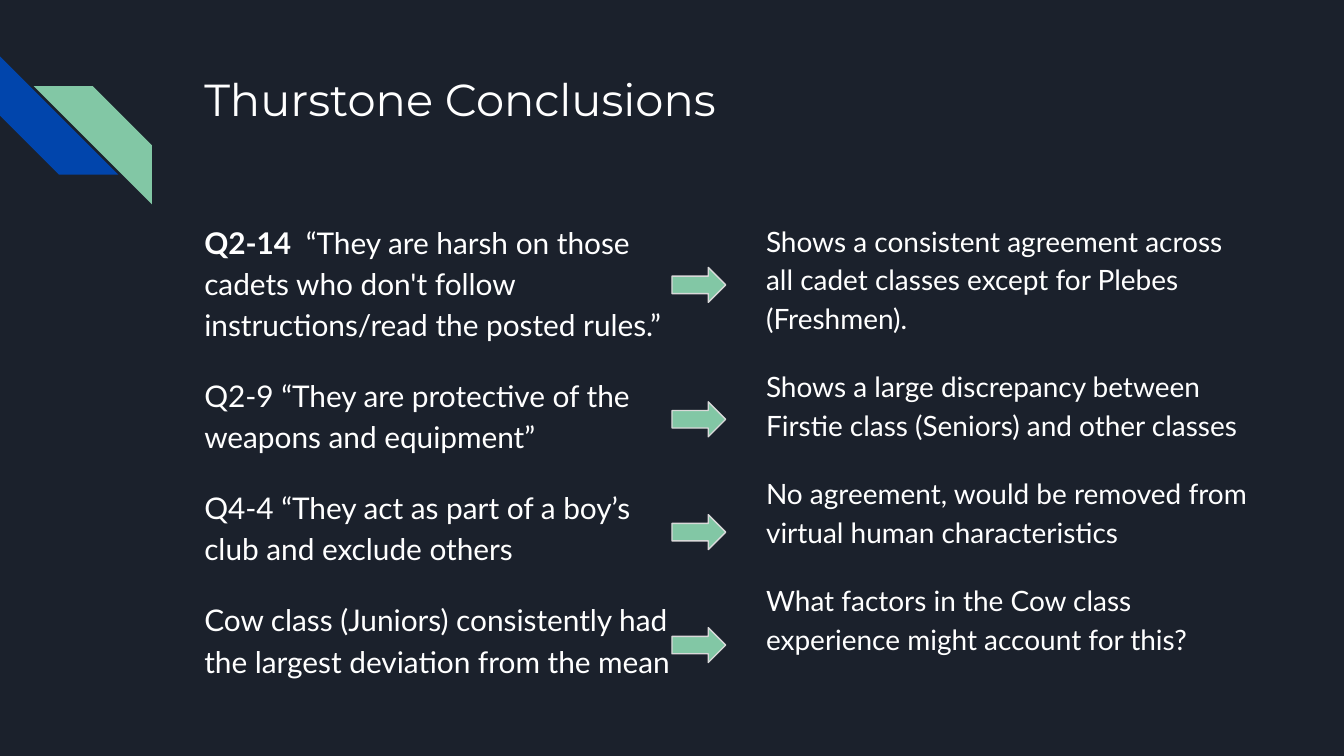
"""Build the Thurstone Conclusions slide: survey statements with arrows to their findings."""
import dataclasses

import pptx
import pptx.dml.color
import pptx.enum.shapes
import pptx.enum.text
import pptx.oxml
import pptx.oxml.ns
import pptx.util
from pptx.util import Inches

COLORS = {"background": "1B212C", "blue": "0145AC", "green": "82C7A5", "outline": "D9D9D9", "text": "FFFFFF"}
MSO_SHAPE = pptx.enum.shapes.MSO_SHAPE


@dataclasses.dataclass
class Conclusion:
    statement: str
    finding: str
    arrow_top: float
    label: str = ""


@dataclasses.dataclass
class Stripe:
    left: float
    top: float
    rotation: float
    color: str


CONCLUSIONS = [
    Conclusion("“They are harsh on those cadets who don't follow instructions/read the posted rules.”",
               "Shows a consistent agreement across all cadet classes except for Plebes (Freshmen).",
               1.99, label="Q2-14  "),
    Conclusion("Q2-9 “They are protective of the weapons and equipment”",
               "Shows a large discrepancy between Firstie class (Seniors) and other classes", 2.99),
    Conclusion("Q4-4 “They act as part of a boy’s club and exclude others",
               "No agreement, would be removed from virtual human characteristics", 3.83),
    Conclusion("Cow class (Juniors) consistently had the largest deviation from the mean",
               "What factors in the Cow class experience might account for this?", 4.67),
]
STRIPES = [Stripe(0, 0.42, 270, "blue"), Stripe(0.25, 0.64, 90, "green")]


def rgb(name: str) -> pptx.dml.color.RGBColor:
    return pptx.dml.color.RGBColor.from_string(COLORS[name])


def place(placeholder, left: float, top: float, width: float, height: float):
    placeholder.left, placeholder.top = Inches(left), Inches(top)
    placeholder.width, placeholder.height = Inches(width), Inches(height)
    frame = placeholder.text_frame
    frame.margin_left = frame.margin_right = frame.margin_top = frame.margin_bottom = Inches(0.1)
    frame.word_wrap = True
    frame.auto_size = pptx.enum.text.MSO_AUTO_SIZE.NONE
    frame.vertical_anchor = pptx.enum.text.MSO_ANCHOR.TOP
    return frame


def style(paragraph, font_name: str, size: float) -> None:
    paragraph.alignment = pptx.enum.text.PP_ALIGN.LEFT
    paragraph.font.name = font_name
    paragraph.font.size = pptx.util.Pt(size)
    paragraph.font.color.rgb = rgb("text")


def fill_column(frame, entries: list[tuple[str, str]], size: float) -> None:
    for index, (label, wording) in enumerate(entries):
        paragraph = frame.paragraphs[0] if index == 0 else frame.add_paragraph()
        if label:
            label_run = paragraph.add_run()
            label_run.text = label
            label_run.font.bold = True
        paragraph.add_run().text = wording
        paragraph.line_spacing = 1.15
        paragraph.space_before = pptx.util.Pt(16 if index else 0)
        properties = paragraph._p.get_or_add_pPr()
        properties.set("marL", "0")
        properties.set("indent", "0")
        properties.append(pptx.oxml.parse_xml(f"<a:buNone {pptx.oxml.ns.nsdecls('a')}/>"))
        style(paragraph, "Lato", size)


def draw_shape(slide, preset, left: float, top: float, width: float, height: float, color: str):
    shape = slide.shapes.add_shape(preset, Inches(left), Inches(top), Inches(width), Inches(height))
    shape.shadow.inherit = False
    shape.fill.solid()
    shape.fill.fore_color.rgb = rgb(color)
    return shape


def draw_stripe(slide, stripe: Stripe) -> None:
    shape = draw_shape(slide, MSO_SHAPE.DIAGONAL_STRIPE, stripe.left, stripe.top, 0.88, 0.88, stripe.color)
    shape.rotation = stripe.rotation
    shape.line.fill.background()


def draw_arrow(slide, top: float) -> None:
    arrow = draw_shape(slide, MSO_SHAPE.RIGHT_ARROW, 5, top, 0.4, 0.26, "green")
    arrow.line.color.rgb = rgb("outline")
    arrow.line.width = pptx.util.Pt(0.75)


def main() -> None:
    presentation = pptx.Presentation()
    presentation.slide_width = Inches(10)
    presentation.slide_height = Inches(10 * 9 / 16)
    slide = presentation.slides.add_slide(presentation.slide_layouts.get_by_name("Two Content"))
    slide.background.fill.solid()
    slide.background.fill.fore_color.rgb = rgb("background")
    title, statements, findings = slide.placeholders

    for stripe in STRIPES:
        draw_stripe(slide, stripe)

    heading = place(title, 1.42, 0.43, 7.7, 1)
    heading.text = "Thurstone Conclusions"
    style(heading.paragraphs[0], "Montserrat", 24)

    fill_column(place(statements, 1.42, 1.53, 3.72, 3.47), [(c.label, c.statement) for c in CONCLUSIONS], 16)
    fill_column(place(findings, 5.6, 1.53, 3.8, 3.47), [("", c.finding) for c in CONCLUSIONS], 15)
    findings.text_frame.paragraphs[-1].space_after = pptx.util.Pt(16)
    for conclusion in CONCLUSIONS:
        draw_arrow(slide, conclusion.arrow_top)

    presentation.save("out.pptx")


if __name__ == "__main__":
    main()
